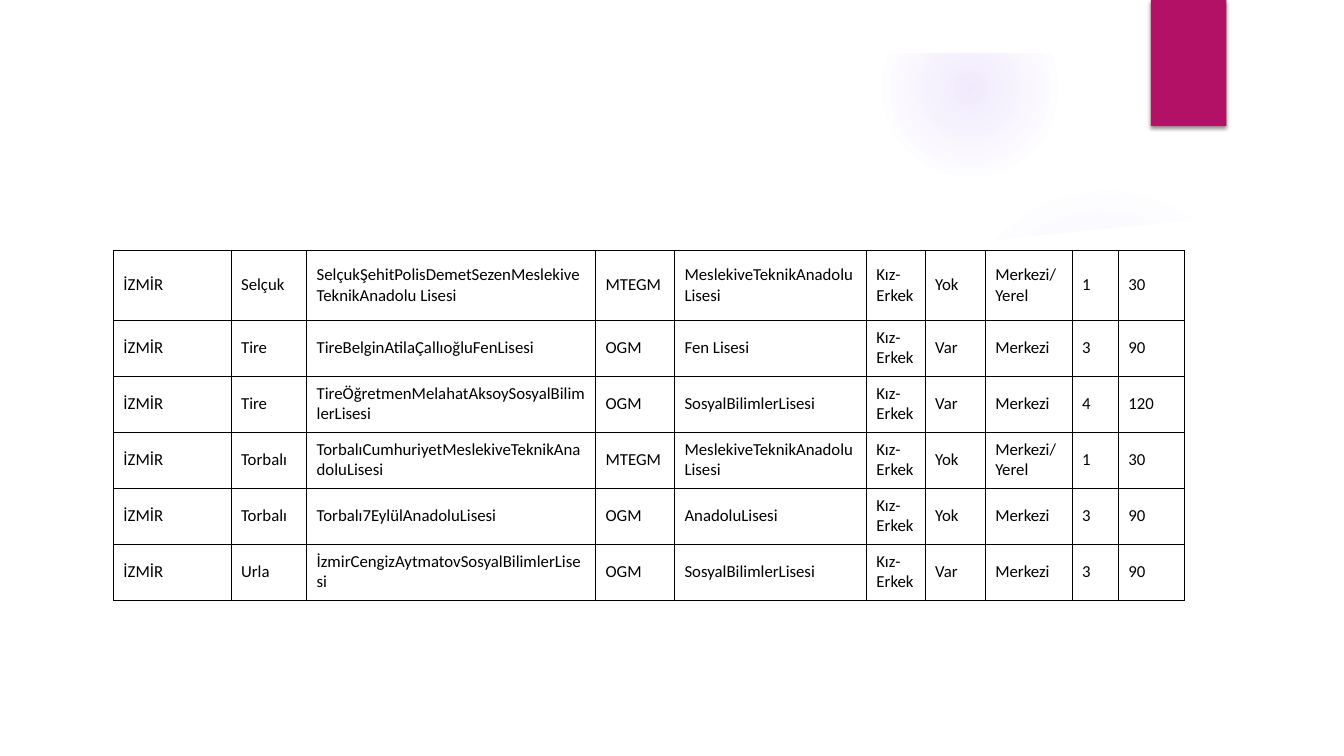
from lxml.etree import SubElement
from pptx import Presentation
from pptx.dml.color import RGBColor
from pptx.enum.shapes import MSO_SHAPE
from pptx.enum.text import MSO_ANCHOR
from pptx.oxml import parse_xml
from pptx.oxml.ns import nsdecls, qn
from pptx.util import Inches, Pt

UNIT = Inches(1) // 12
WIDE, HIGH = 160, 90
FONT = "Calibri"
COLORS = {"white": "FFFFFF", "black": "000000", "tag": "B31166", "glow": "9B6BF2"}
COLS = [14, 9, 34.4, 9.4, 22.85, 7, 7.15, 10.35, 5.5, 7.85]
ROWS = [8.3] + [6.67] * 5
PANEL = [(6, 84), (154, 84), (154, 24.5), (144, 26.04), (134, 27.24), (124, 28.15),
         (114, 28.94), (104, 29.4), (88, 29.75), (72, 29.7), (58, 29.3), (43, 28.3),
         (30, 26.9), (16, 25.8), (6, 24.5)]
SLIVER = [(112, 30), (126, 29.1), (141, 27.4), (154.7, 25.7), (154, 19.9), (147, 22.2),
          (140, 24), (133, 25.3), (126, 26.9), (119, 28.3), (111.6, 29.2)]
BOTH = "Kız-Erkek"
TECH = "MeslekiveTeknikAnadoluLisesi"
SOCIAL = "SosyalBilimlerLisesi"
SCHOOLS = [
    ("Selçuk", "SelçukŞehitPolisDemetSezenMeslekiveTeknikAnadolu Lisesi",
     "MTEGM", TECH, "Yok", "Merkezi/Yerel", 1),
    ("Tire", "TireBelginAtilaÇallıoğluFenLisesi", "OGM", "Fen Lisesi", "Var", "Merkezi", 3),
    ("Tire", "TireÖğretmenMelahatAksoySosyalBilimlerLisesi",
     "OGM", SOCIAL, "Var", "Merkezi", 4),
    ("Torbalı", "TorbalıCumhuriyetMeslekiveTeknikAnadoluLisesi",
     "MTEGM", TECH, "Yok", "Merkezi/Yerel", 1),
    ("Torbalı", "Torbalı7EylülAnadoluLisesi", "OGM", "AnadoluLisesi", "Yok", "Merkezi", 3),
    ("Urla", "İzmirCengizAytmatovSosyalBilimlerLisesi",
     "OGM", SOCIAL, "Var", "Merkezi", 3),
]


def grid(*nums):
    """Turn grid units into slide lengths."""
    return [round(num * UNIT) for num in nums]


def paint(shape, color):
    """Give a shape a flat fill with no line or shadow."""
    shape.shadow.inherit = False
    shape.line.fill.background()
    shape.fill.solid()
    shape.fill.fore_color.rgb = RGBColor.from_string(COLORS[color])
    return shape


def add_box(slide, kind, color, *box):
    """Add a preset shape placed on the grid."""
    return paint(slide.shapes.add_shape(kind, *grid(*box)), color)


def add_glow(slide, left, top, size, stops):
    """Add a round glow that fades towards its rim."""
    props = add_box(slide, MSO_SHAPE.OVAL, "glow", left, top, size, size)._element.spPr
    marks = "".join(
        f'<a:gs pos="{pos * 1000}"><a:srgbClr val="{COLORS["glow"]}">'
        f'<a:alpha val="{alpha * 1000}"/></a:srgbClr></a:gs>' for pos, alpha in stops)
    fade = parse_xml(
        f'<a:gradFill {nsdecls("a")} rotWithShape="1"><a:gsLst>{marks}</a:gsLst>'
        '<a:path path="circle"><a:fillToRect l="50000" t="50000" r="50000" b="50000"/>'
        '</a:path></a:gradFill>')
    props.replace(props.find(qn("a:solidFill")), fade)


def add_outline(slide, points):
    """Add a white closed outline through grid points."""
    form = slide.shapes.build_freeform(*points[0], scale=UNIT)
    form.add_line_segments(points[1:], close=True)
    return paint(form.convert_to_shape(), "white")


def add_alpha(color, share):
    """Set the opacity of a color element in percent."""
    SubElement(color, qn("a:alpha"), val=str(share * 1000))


def add_tag(slide):
    """Add the corner tag with its soft shadow."""
    tag = add_box(slide, MSO_SHAPE.RECTANGLE, "tag", 137, 0, 9, 15)
    cast = SubElement(tag._element.spPr.find(qn("a:effectLst")), qn("a:outerShdw"),
                      blurRad=str(Pt(3)), dist=str(Pt(2)), dir="5400000", rotWithShape="0")
    add_alpha(SubElement(cast, qn("a:srgbClr"), val=COLORS["black"]), 45)


def fill_cell(cell, text):
    """Write one bordered cell with no fill."""
    props = cell._tc.get_or_add_tcPr()
    for side in "LRTB":
        line = SubElement(props, qn(f"a:ln{side}"), w=str(Pt(0.5)))
        SubElement(SubElement(line, qn("a:solidFill")), qn("a:srgbClr"), val=COLORS["black"])
    cell.fill.background()
    cell.vertical_anchor = MSO_ANCHOR.MIDDLE
    run = cell.text_frame.paragraphs[0].add_run()
    run.text = text
    run.font.name, run.font.size = FONT, Pt(12)
    run.font.color.rgb = RGBColor.from_string(COLORS["black"])


def add_schools(slide):
    """Add the table of schools with thirty seats per class."""
    frame = slide.shapes.add_table(len(ROWS), len(COLS),
                                   *grid(13.5, 29.8, sum(COLS), sum(ROWS)))
    table = frame.table
    table.first_row = table.horz_banding = False
    for col, width in zip(table.columns, grid(*COLS)):
        col.width = width
    for row, height, school in zip(table.rows, grid(*ROWS), SCHOOLS):
        row.height = height
        *place, stay, entry, count = school
        texts = ["İZMİR", *place, BOTH, stay, entry, str(count), str(count * 30)]
        for cell, text in zip(row.cells, texts):
            fill_cell(cell, text)


def main():
    """Build the slide and save it."""
    deck = Presentation()
    deck.slide_width, deck.slide_height = grid(WIDE, HIGH)
    slide = deck.slides.add_slide(deck.slide_layouts[6])
    add_glow(slide, 113, 22, 37, [(0, 7), (36, 6), (69, 0)])
    add_glow(slide, 105, 0, 21, [(0, 14), (36, 7), (73, 0)])
    sliver = add_outline(slide, SLIVER)
    add_alpha(sliver._element.spPr.find(qn("a:solidFill"))[0], 20)
    add_outline(slide, PANEL)
    rim = add_box(slide, MSO_SHAPE.FRAME, "white", 0, 0, WIDE, HIGH)
    rim.adjustments[0] = 0.07
    add_tag(slide)
    add_schools(slide)
    deck.save("out.pptx")


if __name__ == "__main__":
    main()
